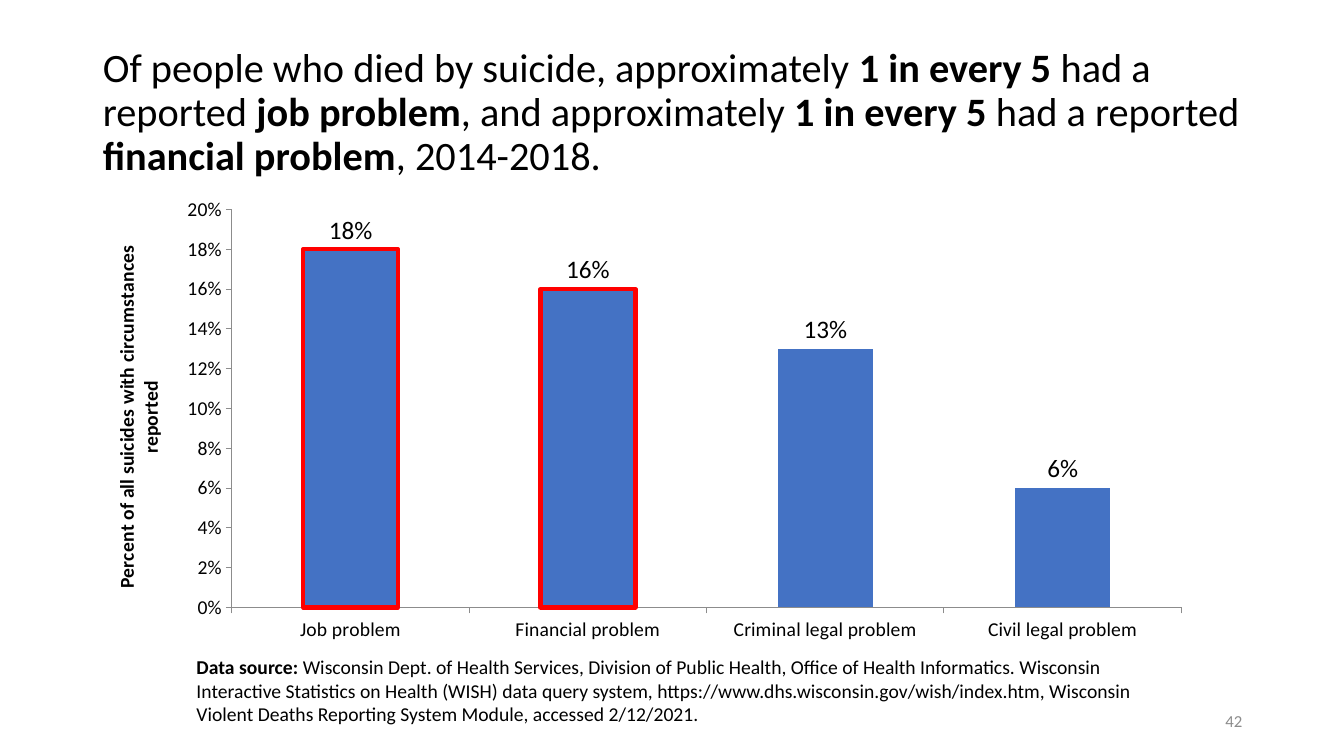
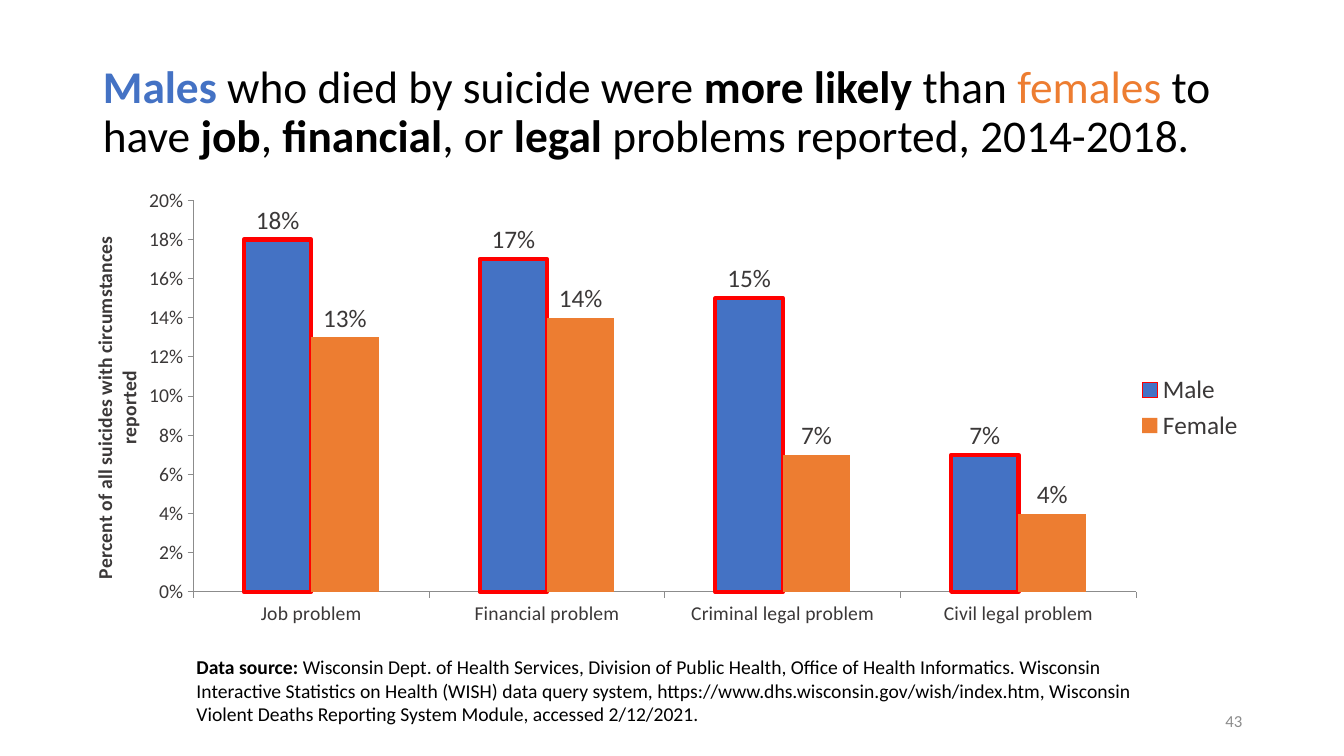
"""Two slides on job, financial and legal problems reported among suicides."""
from lxml import etree
from pptx import Presentation
from pptx import util as u
from pptx.chart.data import CategoryChartData
from pptx.dml.color import RGBColor
from pptx.enum import chart as ch
from pptx.enum import text
from pptx.oxml.ns import qn

BLACK = RGBColor(0x00, 0x00, 0x00)
CHARCOAL = RGBColor(0x3B, 0x38, 0x38)
GREY = RGBColor(0x8C, 0x8C, 0x8C)
BLUE = RGBColor(0x44, 0x72, 0xC4)
ORANGE = RGBColor(0xED, 0x7D, 0x31)
RED = RGBColor(0xFF, 0x00, 0x00)

WIDTH, HEIGHT = u.Inches(13.33), u.Inches(7.5)
INCH = u.Inches(1)
TITLE_BOX = (0.92, 0.4, 11.5, 1.45)
SOURCE_BOX = (1.85, 6.45, 9.62, 1.11)
NUMBER_BOX = (9.42, 6.95, 3, 0.4)

PROBLEMS = ["Job problem", "Financial problem", "Criminal legal problem", "Civil legal problem"]
AXIS_TITLE = "Percent of all suicides with circumstances reported"
SOURCE = [
    ("Data source: ", True, BLACK),
    ("Wisconsin Dept. of Health Services, Division of Public Health, Office of Health "
     "Informatics. Wisconsin Interactive Statistics on Health (WISH) data query system, "
     "https://www.dhs.wisconsin.gov/wish/index.htm, Wisconsin Violent Deaths Reporting "
     "System Module, accessed 2/12/2021.", False, BLACK),
]

SLIDES = [
    {
        "number": "42",
        "title_size": 28.8,
        "title": [
            ("Of people who died by suicide, approximately ", False, BLACK),
            ("1 in every 5 ", True, BLACK),
            ("had a reported ", False, BLACK),
            ("job problem", True, BLACK),
            (", and approximately ", False, BLACK),
            ("1 in every 5 ", True, BLACK),
            ("had a reported ", False, BLACK),
            ("financial problem", True, BLACK),
            (", 2014-2018.", False, BLACK),
        ],
        "chart_box": (0.86, 1.85, 11.08, 4.59),
        "chart_color": BLACK,
        "plot": {"x": 0.13, "y": 0.05, "w": 0.85, "h": 0.86},
        "axis_title": {"x": 0.02, "y": 0.12},
        "series": [("Series 1", (0.18, 0.16, 0.13, 0.06), BLUE)],
        "outlined_points": (0, 1),
    },
    {
        "number": "43",
        "title_size": 32.4,
        "title": [
            ("Males", True, BLUE),
            (" who died by suicide were ", False, BLACK),
            ("more likely ", True, BLACK),
            ("than ", False, BLACK),
            ("females", False, ORANGE),
            (" to have ", False, BLACK),
            ("job", True, BLACK),
            (", ", False, BLACK),
            ("financial", True, BLACK),
            (", or ", False, BLACK),
            ("legal", True, BLACK),
            (" problems reported, 2014-2018.", False, BLACK),
        ],
        "chart_box": (0.75, 1.76, 11.69, 4.57),
        "chart_color": CHARCOAL,
        "plot": {"x": 0.1, "y": 0.05, "w": 0.8, "h": 0.85},
        "axis_title": {"x": 0.01, "y": 0.12},
        "series": [("Male", (0.18, 0.17, 0.15, 0.07), BLUE),
                   ("Female", (0.13, 0.14, 0.07, 0.04), ORANGE)],
        "outlined_points": (),
    },
]


def write_runs(shape, box, runs, size, frame_format, paragraph_format):
    """Place a shape and fill it with (text, bold, colour) runs."""
    shape.left, shape.top, shape.width, shape.height = (int(side * INCH) for side in box)
    frame = shape.text_frame
    paragraph = frame.paragraphs[0]
    for target, values in ((frame, frame_format), (paragraph, paragraph_format)):
        for name, value in values.items():
            setattr(target, name, value)
    for words, bold, color in runs:
        run = paragraph.add_run()
        run.text = words
        for name, value in {"name": "Calibri", "size": u.Pt(size), "bold": bold}.items():
            setattr(run.font, name, value)
        run.font.color.rgb = color


def set_layout(holder, index, shares, inner=False):
    """Fix a chart part at shares of the chart's size."""
    for old in holder.findall(qn("c:layout")):
        holder.remove(old)
    layout = etree.Element(qn("c:layout"))
    manual = etree.SubElement(layout, qn("c:manualLayout"))
    settings = [("layoutTarget", "inner")] if inner else []
    settings += [("xMode", "edge"), ("yMode", "edge")]
    settings += [(side, str(share)) for side, share in shares.items()]
    for tag, value in settings:
        etree.SubElement(manual, qn("c:" + tag)).set("val", value)
    holder.insert(index, layout)


deck = Presentation()
deck.slide_width, deck.slide_height = WIDTH, HEIGHT

for content in SLIDES:
    slide = deck.slides.add_slide(deck.slide_layouts[5])
    middle = {"word_wrap": True, "auto_size": text.MSO_AUTO_SIZE.NONE,
              "vertical_anchor": text.MSO_ANCHOR.MIDDLE}
    write_runs(slide.shapes.title, TITLE_BOX, content["title"], content["title_size"], middle,
               {"alignment": text.PP_ALIGN.LEFT, "line_spacing": 0.9})
    write_runs(slide.shapes.add_textbox(0, 0, 0, 0), SOURCE_BOX, SOURCE, 14,
               {"word_wrap": True}, {})

    data = CategoryChartData(number_format="0%")
    data.categories = PROBLEMS
    for name, shares, _ in content["series"]:
        data.add_series(name, shares)
    chart = slide.shapes.add_chart(ch.XL_CHART_TYPE.COLUMN_CLUSTERED,
                                   *(int(side * INCH) for side in content["chart_box"]),
                                   data).chart
    chart.has_title = False
    chart.font.name, chart.font.size = "Calibri", u.Pt(18)
    chart.font.color.rgb = content["chart_color"]

    several = len(content["series"]) > 1
    chart.has_legend = several
    if several:
        chart.legend.position = ch.XL_LEGEND_POSITION.RIGHT
        chart.legend.include_in_layout = False

    for axis in (chart.category_axis, chart.value_axis):
        for name, value in {"has_major_gridlines": False,
                            "major_tick_mark": ch.XL_TICK_MARK.OUTSIDE,
                            "minor_tick_mark": ch.XL_TICK_MARK.NONE}.items():
            setattr(axis, name, value)
        axis.tick_labels.font.size = u.Pt(14)
        axis.format.line.color.rgb = GREY
        axis.format.line.width = u.Pt(0.75)

    percent = chart.value_axis
    for name, value in {"minimum_scale": 0, "maximum_scale": 0.2, "major_unit": 0.02}.items():
        setattr(percent, name, value)
    percent.tick_labels.number_format = "0%"
    percent.tick_labels.number_format_is_linked = False
    caption = percent.axis_title.text_frame.paragraphs[0].add_run()
    caption.text = AXIS_TITLE
    for name, value in {"name": "Calibri", "size": u.Pt(14), "bold": True}.items():
        setattr(caption.font, name, value)
    caption.font.color.rgb = content["chart_color"]

    set_layout(percent.axis_title._element, 1, content["axis_title"])
    set_layout(chart._chartSpace.chart.plotArea, 0, content["plot"], inner=True)

    columns = chart.plots[0]
    for name, value in {"gap_width": 150, "vary_by_categories": False,
                        "has_data_labels": True}.items():
        setattr(columns, name, value)
    for name, value in {"show_value": True, "number_format": "0%",
                        "number_format_is_linked": False,
                        "position": ch.XL_LABEL_POSITION.OUTSIDE_END}.items():
        setattr(columns.data_labels, name, value)

    for group, (_, _, color) in zip(columns.series, content["series"]):
        group.format.fill.solid()
        group.format.fill.fore_color.rgb = color
    highlighted = [columns.series[0].points[i] for i in content["outlined_points"]]
    for bar in highlighted:
        bar.format.fill.solid()
        bar.format.fill.fore_color.rgb = BLUE
    for part in highlighted or [columns.series[0]]:
        part.format.line.color.rgb = RED
        part.format.line.width = u.Pt(3)

    write_runs(slide.shapes.add_textbox(0, 0, 0, 0), NUMBER_BOX,
               [(content["number"], False, GREY)], 12, middle,
               {"alignment": text.PP_ALIGN.RIGHT})

deck.save("out.pptx")
